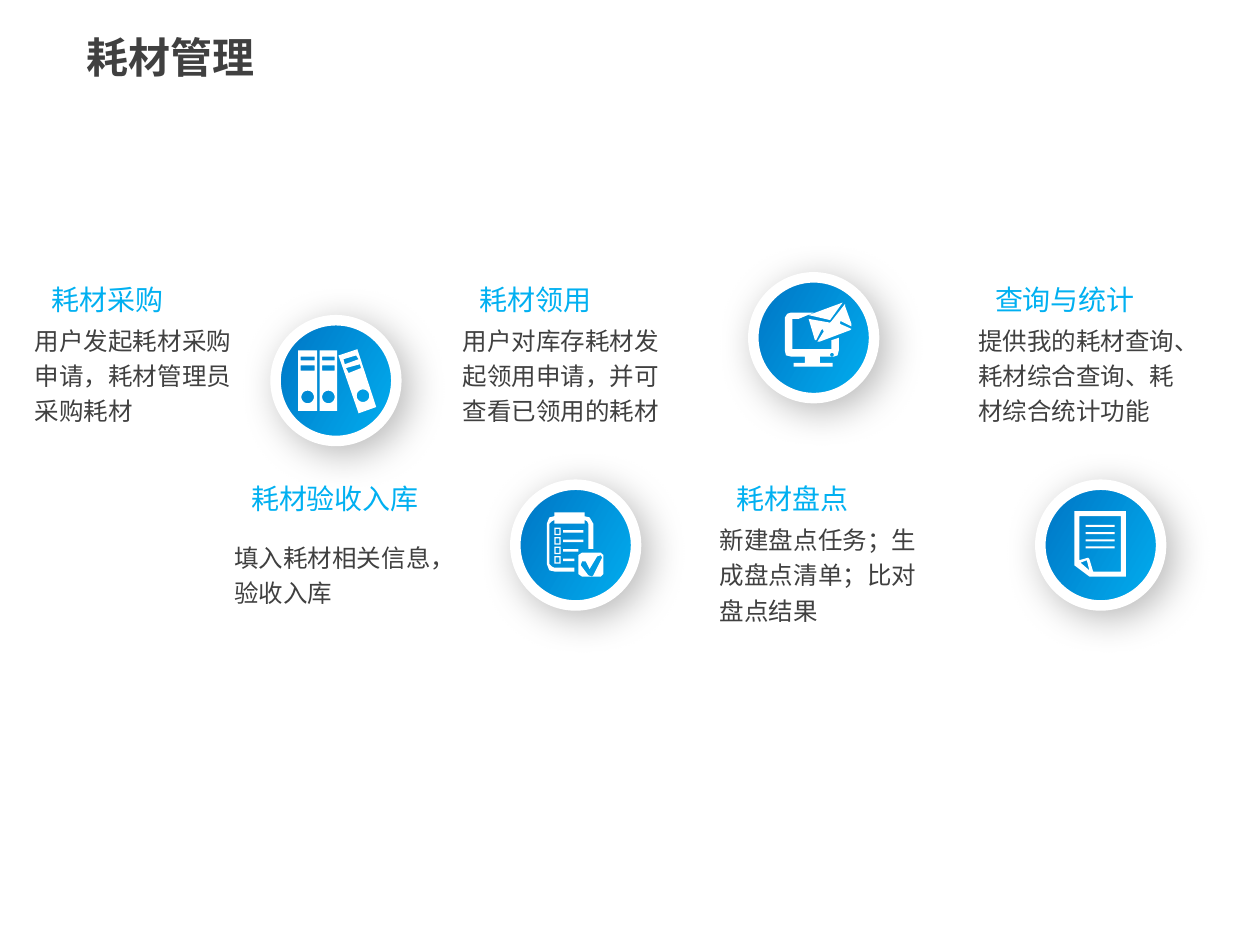
from math import cos, pi, sin

from lxml.etree import SubElement
from pptx import Presentation
from pptx.dml.color import RGBColor
from pptx.enum.shapes import MSO_SHAPE
from pptx.enum.text import MSO_ANCHOR, MSO_AUTO_SIZE, PP_ALIGN
from pptx.oxml.ns import qn
from pptx.util import Pt

FONT = "Noto Sans CJK SC"
DARK, WHITE = "404040", "FFFFFF"
BLUES = ("01B0F1", "0073C3")
UPPER, LOWER = 154, 268
BADGE = 69
GRID = 96  # icon units across one badge

# heading, description, left, top, description lines
TOPICS = [
    ("耗材采购", "用户发起耗材采购申请，耗材管理员采购耗材", 22.5, UPPER, 3),
    ("耗材验收入库", "填入耗材相关信息，验收入库", 136.5, LOWER, 2),
    ("耗材领用", "用户对库存耗材发起领用申请，并可查看已领用的耗材", 267, UPPER, 3),
    ("耗材盘点", "新建盘点任务；生成盘点清单；比对盘点结果", 414, LOWER, 3),
    ("查询与统计", "提供我的耗材查询、耗材综合查询、耗材综合统计功能", 561.5, UPPER, 3),
]


def rgb(color):
    return RGBColor.from_string(color)


def rectangle(left, top, right, bottom):
    return [(left, top), (right, top), (right, bottom), (left, bottom)]


def circle(x, y, radius, steps=24):
    angles = [2 * pi * step / steps for step in range(steps)]
    return [(x + radius * cos(a), y + radius * sin(a)) for a in angles]


def binders_icon():
    contours = [[(50, 28), (65, 23), (80, 69), (66, 74)], circle(69.5, 60, 5),
                [(56, 38), (58, 42), (68, 38), (67, 35)],
                [(54, 31), (55, 35), (66, 31), (64, 28)]]
    for left, right in ((18, 33), (35, 49)):
        contours += [rectangle(left, 24, right, 72),
                     circle((left + right) / 2, 61, 5),
                     rectangle(left + 2, 29, right - 2, 32),
                     rectangle(left + 2, 36, right - 2, 40)]
    return contours


def checklist_icon():
    board = [(31, 22), (55, 22), (55, 25), (59, 26), (62, 31), (62, 51),
             (58, 51), (58, 31), (57, 29), (55, 28), (55, 31), (31, 31),
             (31, 28), (29, 29), (27, 31), (27, 63), (29, 65), (31, 66),
             (47, 66), (47, 69), (31, 69), (27, 68), (25, 63), (25, 31),
             (27, 26), (31, 25)]
    check_box = [(53, 54), (68, 54), (70, 56), (70, 71), (68, 73), (53, 73),
                 (50, 71), (50, 56)]
    tick = [(52, 64), (58, 72), (61, 73), (62, 72), (69, 58), (68, 56),
            (65, 57), (59, 67), (56, 61), (53, 61)]
    contours = [board, check_box, tick]
    for row, line_end in enumerate((54, 54, 50, 47)):
        top = 34 + 7.6 * row
        contours += [rectangle(31, top, 36, top + 6),
                     rectangle(32, top + 1, 35, top + 5),
                     rectangle(38, top + 2, line_end, top + 4)]
    return contours


def mail_icon():
    monitor = [(30, 28), (48, 28), (36, 33), (31, 33), (31, 57), (62, 57),
               (62, 50), (68, 48), (68, 58), (67, 62), (64, 63), (53, 63),
               (53, 68), (63, 68), (63, 71), (32, 71), (32, 68), (41, 68),
               (41, 63), (30, 63), (26, 62), (25, 58), (25, 32), (27, 29)]
    flap = [(71, 20), (44, 30), (57, 33), (61, 34)]
    envelope = [(73, 21), (62, 35), (61, 36), (44, 33), (49, 50), (50, 50),
                (54, 42), (55, 41), (56, 43), (51, 51), (53, 51), (77, 42),
                (78, 41), (69, 37), (69, 35), (70, 35), (78, 39), (78, 37),
                (73, 23)]
    return [monitor, flap, envelope, circle(62.5, 61.5, 1.5)]


def page_icon():
    page = [(27, 21), (68, 21), (68, 73), (39, 73), (27, 64)]
    inside = [(31, 60), (38, 58), (39, 59), (42, 69), (64, 69), (64, 25), (31, 25)]
    curl = [(39, 68), (37, 60), (32, 62)]
    lines = [rectangle(36, top, 59, top + 1.6) for top in (32, 37.7, 43.4, 49)]
    return [page, inside, curl, *lines]


def set_gradient(fill, angle, first_position=0):
    fill.gradient()
    fill.gradient_angle = angle
    for stop, color, position in zip(fill.gradient_stops, BLUES, (first_position, 1)):
        stop.color.rgb = rgb(color)
        stop.position = position


def write_text(frame, text, size=14, color=DARK, bold=False, gradient=False,
               spacing=None, anchor=MSO_ANCHOR.TOP, wrap=True,
               auto_size=MSO_AUTO_SIZE.SHAPE_TO_FIT_TEXT):
    frame.word_wrap = wrap
    frame.auto_size = auto_size
    frame.vertical_anchor = anchor
    paragraph = frame.paragraphs[0]
    paragraph.alignment = PP_ALIGN.LEFT
    paragraph.line_spacing = spacing
    run = paragraph.add_run()
    run.text = text
    font = run.font
    font.name, font.size, font.bold = FONT, Pt(size), bold
    SubElement(run._r.get_or_add_rPr(), qn("a:ea"), typeface=FONT)
    if gradient:
        set_gradient(font.fill, 315, 0.25)
    else:
        font.color.rgb = rgb(color)


def add_title(slide, text):
    title = slide.shapes.title
    title.left, title.top, title.width, title.height = Pt(42.5), Pt(8.5), Pt(640), Pt(48)
    write_text(title.text_frame, text, size=24, bold=True,
               anchor=MSO_ANCHOR.MIDDLE, auto_size=MSO_AUTO_SIZE.NONE)


def add_topic(slide, heading, description, left, top, lines):
    """Place a heading with its description centred 59 pt below the heading's top."""
    box = slide.shapes.add_textbox(Pt(left), Pt(top), Pt(15 + 16 * len(heading)), Pt(29))
    write_text(box.text_frame, heading, size=16, gradient=True, spacing=1.2, wrap=False)
    height = 8 + 20 * lines
    box = slide.shapes.add_textbox(Pt(left - 9.7), Pt(top + 59 - height / 2),
                                   Pt(132), Pt(height))
    write_text(box.text_frame, description, spacing=1.2, anchor=MSO_ANCHOR.MIDDLE)


def add_shadow(shape):
    effects = SubElement(shape._element.spPr, qn("a:effectLst"))
    shadow = SubElement(effects, qn("a:outerShdw"), blurRad=str(Pt(22)),
                        dist=str(Pt(6)), dir="2700000", algn="tl", rotWithShape="0")
    color = SubElement(shadow, qn("a:srgbClr"), val="000000")
    SubElement(color, qn("a:alpha"), val="28000")


def add_icon(slide, contours, left, top):
    """Draw all contours as one outline, so that inner contours become holes."""
    def place(point):
        x, y = (coordinate * BADGE / GRID for coordinate in point)
        return 100 * (left + x), 100 * (top + y)

    builder = None
    for contour in contours:
        start, *others = map(place, contour)
        if builder is None:
            builder = slide.shapes.build_freeform(*start, scale=Pt(0.01))
        else:
            builder.move_to(*start)
        builder.add_line_segments(others, close=True)
    icon = builder.convert_to_shape()
    icon.shadow.inherit = False
    icon.fill.solid()
    icon.fill.fore_color.rgb = rgb(WHITE)
    icon.line.fill.background()


def add_badge(slide, contours, left, top):
    disc = slide.shapes.add_shape(MSO_SHAPE.OVAL, Pt(left), Pt(top), Pt(BADGE), Pt(BADGE))
    set_gradient(disc.fill, 150)
    disc.line.color.rgb = rgb(WHITE)
    disc.line.width = Pt(6)
    add_shadow(disc)
    add_icon(slide, contours, left, top)


def main():
    presentation = Presentation()
    presentation.slide_width, presentation.slide_height = Pt(720), Pt(540)
    slide = presentation.slides.add_slide(presentation.slide_layouts[5])
    add_title(slide, "耗材管理")
    for topic in TOPICS:
        add_topic(slide, *topic)
    add_badge(slide, binders_icon(), 157.5, 183)
    add_badge(slide, checklist_icon(), 294.5, 277)
    add_badge(slide, mail_icon(), 430.5, 158.5)
    add_badge(slide, page_icon(), 594.5, 277)
    presentation.save("out.pptx")


if __name__ == "__main__":
    main()
